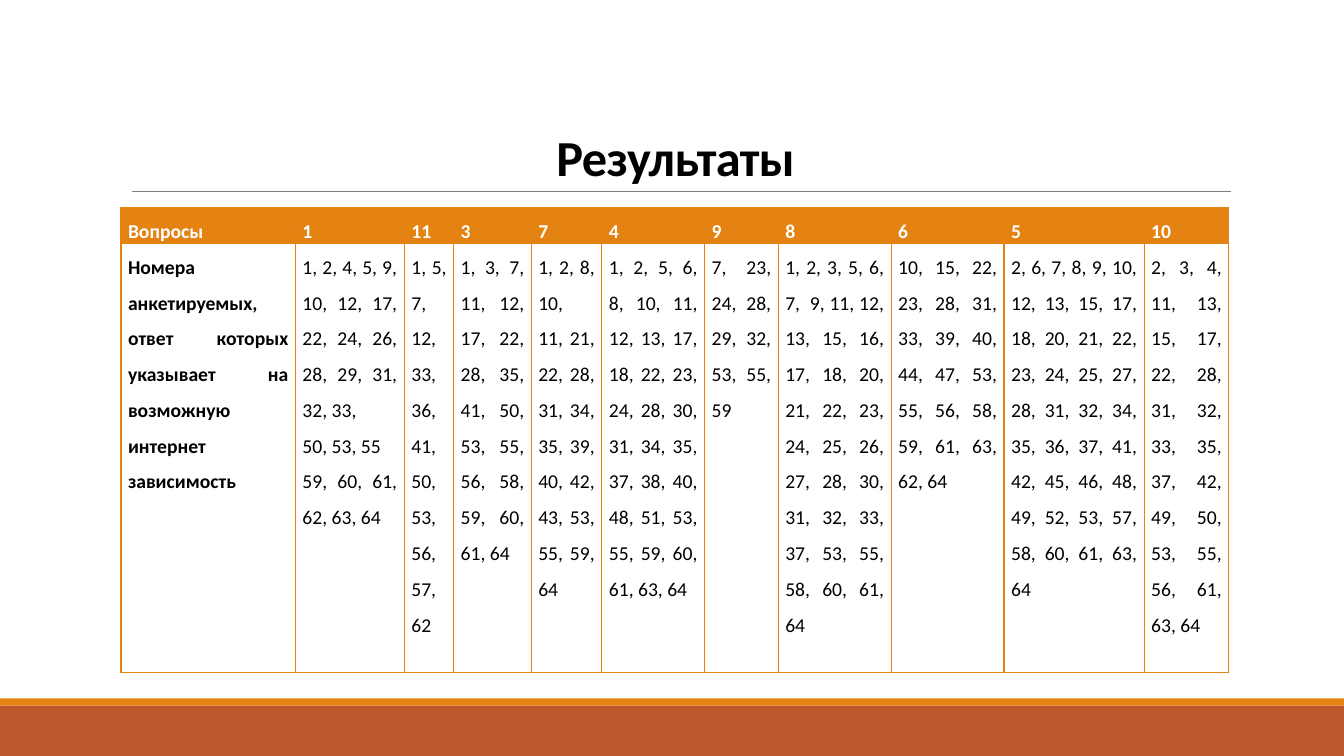
from lxml import etree
from pptx import Presentation
from pptx.dml.color import RGBColor
from pptx.enum import shapes, text
from pptx.oxml.ns import qn
from pptx.util import Inches, Pt

ORANGE, RUST, GREY = "E48312", "BD582C", "808080"
BLACK, WHITE = "000000", "FFFFFF"
TITLE = "Результаты"
# heading, column width, paragraphs
COLS = [
    ("Вопросы", 1.73, ["Номера анкетируемых, ответ которых указывает на возможную интернет зависимость"]),
    ("1", 1.08, ["1, 2, 4, 5, 9, 10, 12, 17, 22, 24, 26, 28, 29, 31, 32, 33, ",
                 "50, 53, 55", "59, 60, 61, 62, 63, 64"]),
    ("11", 0.49, ["1, 5, 7, 12,  33, 36, 41, 50, 53, 56, 57,", "62"]),
    ("3", 0.77, ["1, 3, 7, 11, 12, 17, 22, 28, 35, 41, 50, 53, 55, 56, 58, 59, 60, 61, 64"]),
    ("7", 0.7, ["1, 2, 8, 10,", "11, 21, 22, 28, 31, 34, 35, 39, 40, 42, 43, 53, 55, 59, 64"]),
    ("4", 1.02, ["1, 2, 5, 6, 8, 10, 11, 12, 13, 17, 18, 22, 23, 24, 28, 30, 31, 34, 35, "
                 "37, 38, 40, 48, 51, 53, 55, 59, 60, 61, 63, 64"]),
    ("9", 0.73, ["7, 23, 24, 28, 29, 32, 53, 55, 59"]),
    ("8", 1.12, ["1, 2, 3, 5, 6, 7,  9, 11, 12, 13, 15, 16, 17, 18, 20, 21, 22, 23, 24, 25, "
                 "26, 27, 28, 30, 31, 32, 33, 37, 53, 55, 58, 60, 61, 64"]),
    ("6", 1.12, ["10, 15, 22, 23, 28, 31, 33, 39, 40, 44, 47, 53, 55, 56, 58, 59, 61, 63, 62, 64"]),
    ("5", 1.39, ["2, 6, 7, 8, 9, 10, 12, 13, 15, 17, 18, 20, 21, 22, 23, 24, 25, 27, 28, 31, "
                 "32, 34, 35, 36, 37, 41, 42, 45, 46, 48, 49, 52, 53, 57, 58, 60, 61, 63, 64"]),
    ("10", 0.84, ["2, 3, 4, 11, 13, 15, 17, 22, 28, 31, 32, 33, 35, 37, 42, 49, 50, 53, 55, "
                  "56, 61, 63, 64"]),
]
ROWS = [0.36, 4.25]


def color(code):
    return RGBColor.from_string(code)


def write(frame, lines, size=14, ink=BLACK, bold=False, align="JUSTIFY", lead=1.5, track=0):
    """Fill a text frame, one paragraph per line; track is letter spacing in points."""
    frame.word_wrap = True
    for i, line in enumerate(lines):
        para = frame.add_paragraph() if i else frame.paragraphs[0]
        para.alignment = text.PP_ALIGN[align]
        para.line_spacing = lead
        run = para.add_run()
        run.text = line
        font = run.font
        font.name, font.size, font.bold = "Calibri", Pt(size), bold
        font.color.rgb = color(ink)
        if track:
            run._r.get_or_add_rPr().set("spc", str(int(track * 100)))


def band(top, high, fill):
    bar = slide.shapes.add_shape(shapes.MSO_SHAPE.RECTANGLE, 0, Inches(top), deck.slide_width, Inches(high))
    bar.shadow.inherit = False
    bar.fill.solid()
    bar.fill.fore_color.rgb = color(fill)
    bar.line.fill.background()


def frame_cell(cell):
    """Draw a one-point border on all four sides."""
    props = cell._tc.get_or_add_tcPr()
    for i, side in enumerate("LRTB"):
        edge = etree.Element(qn(f"a:ln{side}"), w=str(Pt(1)))
        fill = etree.SubElement(edge, qn("a:solidFill"))
        etree.SubElement(fill, qn("a:srgbClr"), val=ORANGE)
        props.insert(i, edge)


deck = Presentation()
deck.slide_width, deck.slide_height = Inches(13.33), Inches(7.5)
slide = deck.slides.add_slide(deck.slide_layouts[6])

band(7, 0.5, RUST)
band(6.93, 0.07, ORANGE)
rule = slide.shapes.add_connector(shapes.MSO_CONNECTOR.STRAIGHT, Inches(1.31), Inches(1.9), Inches(12.21), Inches(1.9))
rule.line.color.rgb = color(GREY)
rule.line.width = Pt(0.5)
etree.SubElement(rule._element.spPr, qn("a:effectLst"))

title = slide.shapes.add_textbox(Inches(1.2), Inches(0.31), Inches(11), Inches(1.59)).text_frame
title.vertical_anchor = text.MSO_ANCHOR.BOTTOM
write(title, [TITLE], size=36, bold=True, align="CENTER", lead=0.85, track=-0.5)

table = slide.shapes.add_table(len(ROWS), len(COLS), Inches(1.2), Inches(2.06),
                               Inches(11), Inches(sum(ROWS))).table
for row, high in zip(table.rows, ROWS):
    row.height = Inches(high)
for c, (head, wide, lines) in enumerate(COLS):
    table.columns[c].width = Inches(wide)
    for r, words in enumerate(([head], lines)):
        cell = table.cell(r, c)
        cell.margin_left = cell.margin_right = Inches(0.07)
        cell.margin_top = cell.margin_bottom = 0
        frame_cell(cell)
        cell.fill.solid()
        cell.fill.fore_color.rgb = color(WHITE if r else ORANGE)
        write(cell.text_frame, words, ink=BLACK if r else WHITE, bold=r == 0 or c == 0)

deck.save("out.pptx")
